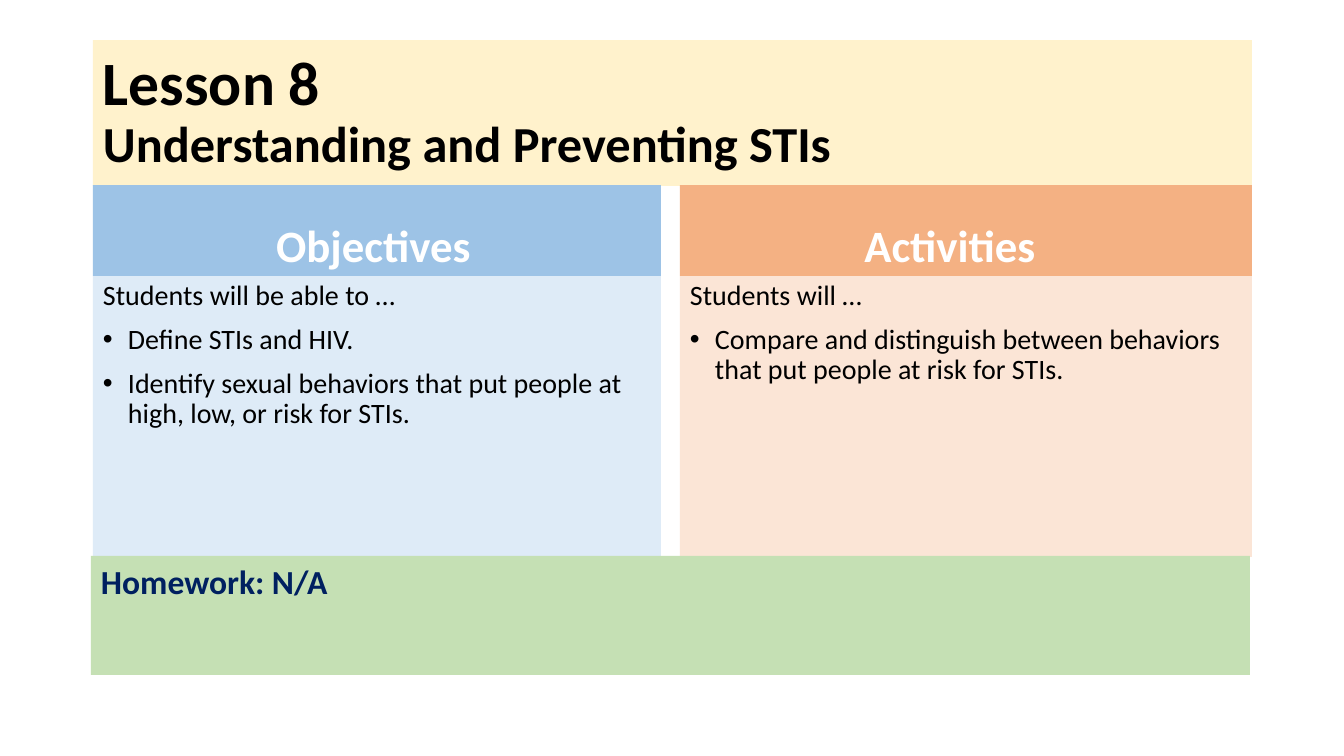
from lxml.etree import SubElement
from pptx import Presentation
from pptx.dml.color import RGBColor
from pptx.enum.shapes import MSO_SHAPE
from pptx.enum.text import MSO_ANCHOR, MSO_AUTO_SIZE, PP_ALIGN
from pptx.oxml.ns import qn
from pptx.util import Pt

PX = 914400 / 100.8


def px(length):
    return round(length * PX)


def panel(shape, box, fill, lines, anchor=MSO_ANCHOR.TOP, align=PP_ALIGN.LEFT, right_inset=10):
    shape.left, shape.top, shape.width, shape.height = [px(length) for length in box]
    shape.fill.solid()
    shape.fill.fore_color.rgb = RGBColor.from_string(fill)
    shape.line.fill.background()
    frame = shape.text_frame
    layout = {
        "word_wrap": True, "auto_size": MSO_AUTO_SIZE.NONE, "vertical_anchor": anchor,
        "margin_left": px(10), "margin_right": px(right_inset),
        "margin_top": px(5), "margin_bottom": px(5),
    }
    for name, value in layout.items():
        setattr(frame, name, value)
    for index, (runs, spacing, bulleted) in enumerate(lines):
        paragraph = frame.paragraphs[0] if index == 0 else frame.add_paragraph()
        paragraph.alignment = align
        paragraph.line_spacing = spacing
        paragraph.space_before = Pt(10 if index else 0)
        if bulleted:
            properties = paragraph._p.get_or_add_pPr()
            properties.set("marL", str(px(25)))
            properties.set("indent", str(-px(25)))
            SubElement(properties, qn("a:buFont"), typeface="Arial")
            SubElement(properties, qn("a:buChar"), char="•")
        for position, (text, size, bold, color) in enumerate(runs):
            if position:
                paragraph.add_line_break()
            run = paragraph.add_run()
            run.text = text
            style = {"name": "Calibri", "size": Pt(size), "bold": bold}
            for name, value in style.items():
                setattr(run.font, name, value)
            run.font.color.rgb = RGBColor.from_string(color)


deck = Presentation()
deck.slide_width, deck.slide_height = px(1344), px(756)
slide = deck.slides.add_slide(deck.slide_layouts[5])

lesson = [("Lesson 8", 44, True, "000000"),
          ("Understanding and Preventing STIs", 36, True, "000000")]
panel(slide.shapes.title, (93, 40, 1159, 146), "FFF2CC", [(lesson, 0.9, False)],
      anchor=MSO_ANCHOR.MIDDLE)

columns = [
    ("Objectives", 93, 568, "9DC3E6", "DEEBF7", 17,
     ["Students will be able to …", "Define STIs and HIV.",
      "Identify sexual behaviors that put people at high, low, or risk for STIs."]),
    ("Activities", 680, 572, "F4B183", "FBE5D6", 42,
     ["Students will …",
      "Compare and distinguish between behaviors that put people at risk for STIs."]),
]
panels = []
for heading, left, width, heading_fill, body_fill, right_inset, points in columns:
    heading_line = ([(heading, 32, True, "FFFFFF")], 1.0, False)
    panels.append(((left, 185, width, 91), heading_fill, [heading_line],
                   MSO_ANCHOR.BOTTOM, PP_ALIGN.CENTER, right_inset))
    point_lines = [([(point, 20, False, "000000")], 0.9, index > 0)
                   for index, point in enumerate(points)]
    panels.append(((left, 276, width, 281), body_fill, point_lines))
homework = ([("Homework: N/A", 24, True, "002060")], 1.0, False)
panels.append(((91, 556, 1159, 119), "C5E0B4", [homework]))

for settings in panels:
    block = slide.shapes.add_shape(MSO_SHAPE.RECTANGLE, 0, 0, 0, 0)
    block.shadow.inherit = False
    panel(block, *settings)

deck.save("out.pptx")
